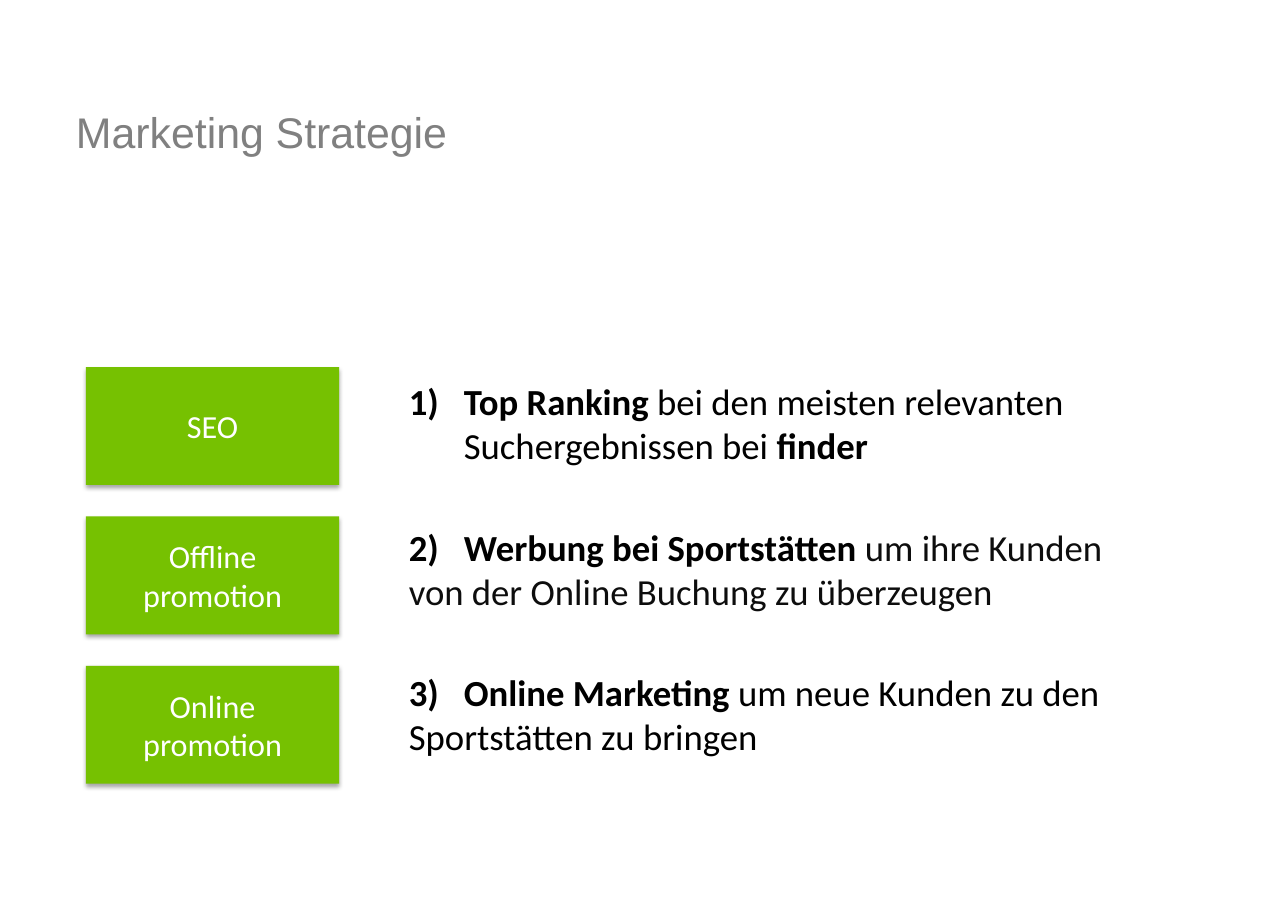
from lxml.etree import SubElement
from pptx import Presentation
from pptx.dml.color import RGBColor
from pptx.enum.shapes import MSO_SHAPE
from pptx.enum.text import MSO_ANCHOR, MSO_AUTO_SIZE, PP_ALIGN
from pptx.oxml.ns import qn
from pptx.util import Inches, Pt

SLIDE_WIDTH, SLIDE_HEIGHT = Inches(11.69), Inches(8.27)
GREEN, GREY, BLACK, NEAR_BLACK, WHITE = "76C101", "808080", "000000", "0D0D0D", "FFFFFF"

CHANNEL_LEFT, CHANNEL_TOP = 6.67, 40.3
CHANNEL_WIDTH, CHANNEL_HEIGHT, CHANNEL_STEP = 19.67, 12.94, 16.4
CHANNELS = ["SEO", "Offline promotion", "Online promotion"]

# Each measure: lines of (text, bold, colour) runs; the first is numbered automatically.
MEASURES = [
    [[("Top Ranking ", True, BLACK),
      ("bei den meisten relevanten Suchergebnissen bei ", False, BLACK),
      ("finder", True, BLACK)]],
    [[("2)\tWerbung bei Sportstätten ", True, BLACK), ("um ihre Kunden", False, NEAR_BLACK)],
     [("von der Online Buchung zu überzeugen", False, NEAR_BLACK)]],
    [[("3)\tOnline Marketing ", True, BLACK), ("um neue Kunden zu den", False, BLACK)],
     [("Sportstätten zu bringen", False, BLACK)]],
]


def colour(hex_value):
    return RGBColor.from_string(hex_value)


def share(left, top, width, height):
    """Turn percentages of the slide into a position and size."""
    return (int(SLIDE_WIDTH * left / 100), int(SLIDE_HEIGHT * top / 100),
            int(SLIDE_WIDTH * width / 100), int(SLIDE_HEIGHT * height / 100))


def place(placeholder, *area):
    placeholder.left, placeholder.top, placeholder.width, placeholder.height = share(*area)


def set_frame(frame, anchor):
    frame.word_wrap = True
    frame.auto_size = MSO_AUTO_SIZE.NONE
    frame.vertical_anchor = anchor
    frame.margin_left = frame.margin_right = Inches(0.11)
    frame.margin_top = frame.margin_bottom = Inches(0.06)


def add_run(paragraph, text, size, hex_value, font="Calibri", bold=False):
    run = paragraph.add_run()
    run.text = text
    run.font.name, run.font.size, run.font.bold = font, Pt(size), bold
    run.font.color.rgb = colour(hex_value)


def add_soft_shadow(shape):
    shape.shadow.inherit = False
    effects = shape._element.spPr.find(qn("a:effectLst"))
    shadow = SubElement(effects, qn("a:outerShdw"), blurRad=str(Pt(3.1)), dist=str(Pt(1.8)),
                        dir="5400000", rotWithShape="0")
    black = SubElement(shadow, qn("a:srgbClr"), val=BLACK)
    SubElement(black, qn("a:alpha"), val="35000")


def set_numbering(paragraph, automatic):
    """Number with a hanging indent, or leave a tab stop after a typed number."""
    properties = paragraph._p.get_or_add_pPr()
    hang = Inches(0.5) if automatic else 0
    properties.set("marL", str(hang))
    properties.set("indent", str(-hang))
    if automatic:
        SubElement(properties, qn("a:buFont"), typeface="+mj-lt")
        SubElement(properties, qn("a:buAutoNum"), type="arabicParenR")
    else:
        SubElement(properties, qn("a:buNone"))
        tabs = SubElement(properties, qn("a:tabLst"))
        SubElement(tabs, qn("a:tab"), pos=str(Inches(0.57)), algn="l")


def fill_title(title):
    place(title, 4.96, 4, 65.36, 20.92)
    set_frame(title.text_frame, MSO_ANCHOR.MIDDLE)
    heading = title.text_frame.paragraphs[0]
    heading.alignment = PP_ALIGN.LEFT
    add_run(heading, "Marketing Strategie", 28, GREY, font="Arial")


def fill_measures(body):
    place(body, 30.8, 40.87, 62.19, 48.85)
    frame = body.text_frame
    set_frame(frame, MSO_ANCHOR.TOP)
    for index, lines in enumerate(MEASURES):
        paragraph = frame.add_paragraph() if index else frame.paragraphs[0]
        set_numbering(paragraph, automatic=index == 0)
        paragraph.space_before = Pt(37.5 if index else 0)
        for line_number, line in enumerate(lines):
            if line_number:
                paragraph.add_line_break()
            for text, bold, hex_value in line:
                add_run(paragraph, text, 24, hex_value, bold=bold)


def add_channel(slide, row, label):
    top = CHANNEL_TOP + row * CHANNEL_STEP
    channel = slide.shapes.add_shape(
        MSO_SHAPE.RECTANGLE, *share(CHANNEL_LEFT, top, CHANNEL_WIDTH, CHANNEL_HEIGHT))
    channel.fill.solid()
    channel.fill.fore_color.rgb = colour(GREEN)
    channel.line.fill.background()
    add_soft_shadow(channel)
    set_frame(channel.text_frame, MSO_ANCHOR.MIDDLE)
    caption = channel.text_frame.paragraphs[0]
    caption.alignment = PP_ALIGN.CENTER
    add_run(caption, label, 21, WHITE)


def main():
    presentation = Presentation()
    presentation.slide_width, presentation.slide_height = SLIDE_WIDTH, SLIDE_HEIGHT
    slide = presentation.slides.add_slide(presentation.slide_layouts[1])
    fill_title(slide.shapes.title)
    fill_measures(slide.placeholders[1])
    for row, label in enumerate(CHANNELS):
        add_channel(slide, row, label)
    presentation.save("out.pptx")


if __name__ == "__main__":
    main()
